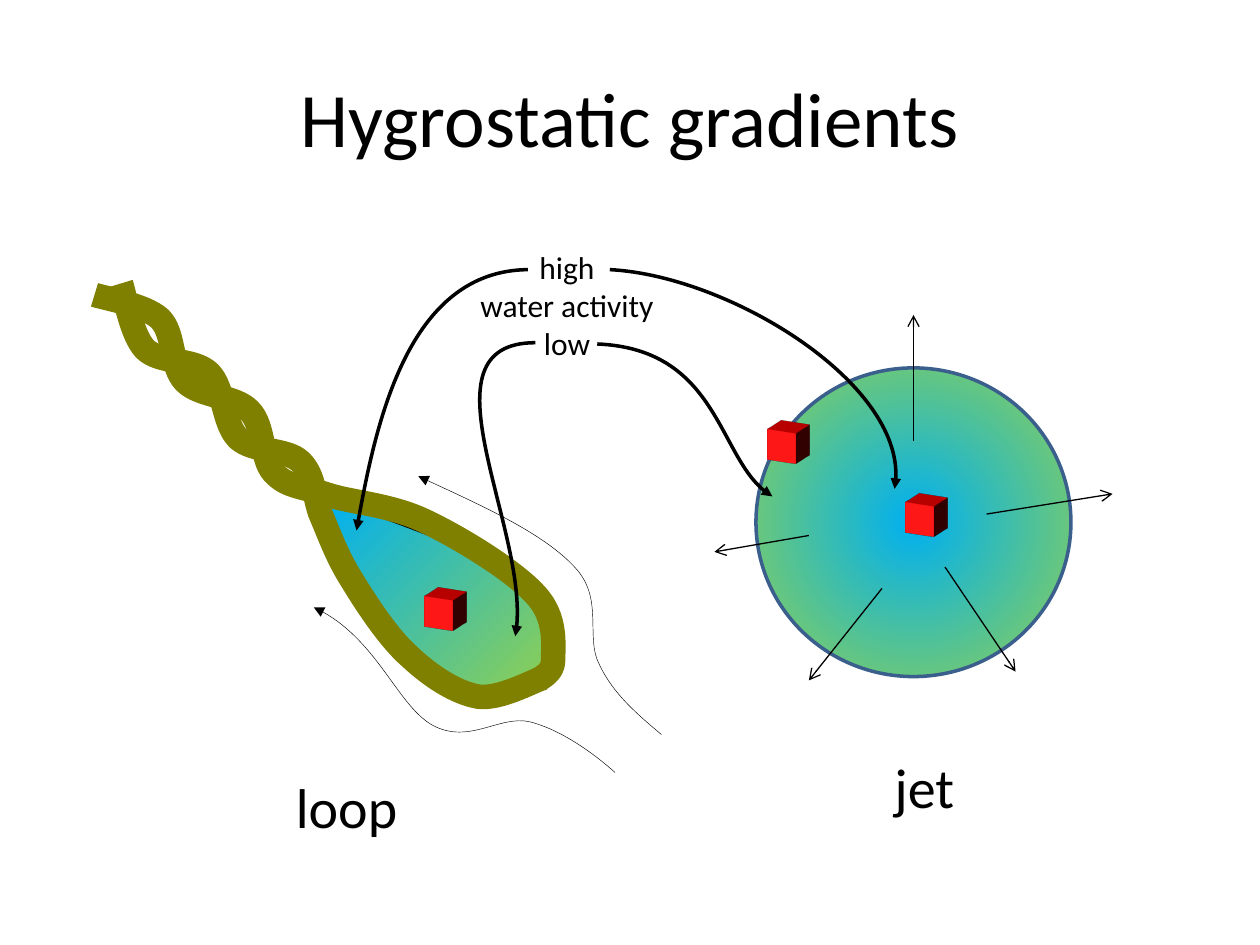
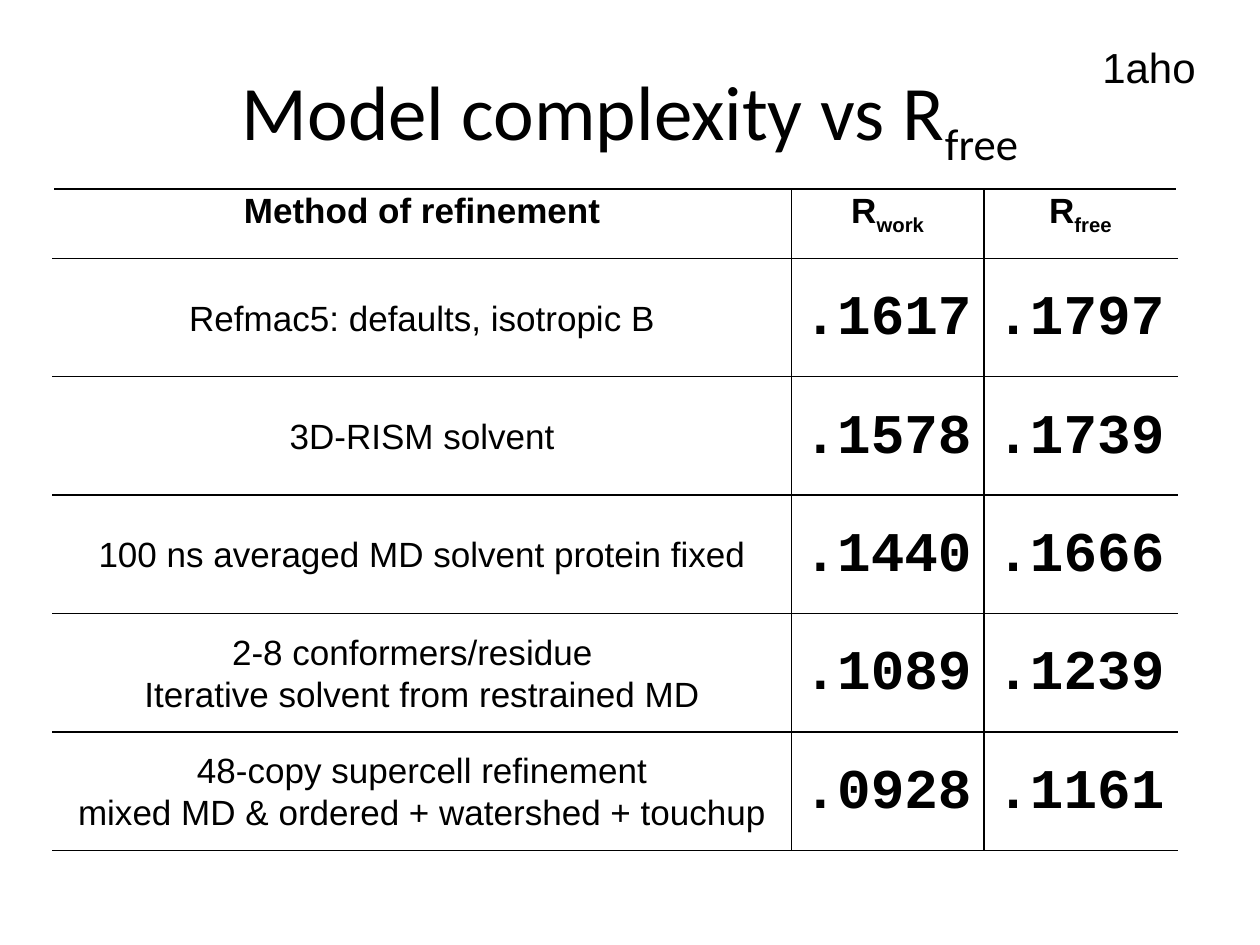
from lxml import etree
from pptx import Presentation
from pptx.dml.color import RGBColor
from pptx.enum import shapes, text
from pptx.oxml import ns
from pptx.util import Inches, Pt

# Shared style
BLACK, WHITE = "000000", "FFFFFF"
WET, DRY = "00B0F0", "92D050"
ROPE, JET_EDGE, CRYSTAL = "808000", "3A5F8C", "FF0000"
BODY, PLAIN, DIGITS = "Calibri", "Arial", "Courier New"
CENTER = text.PP_ALIGN.CENTER
CUBE_SIZE = 0.25
BOUND_STEPS = 40


def color(value):
    return RGBColor.from_string(value)


def add_xml(parent, tag, **attributes):
    return etree.SubElement(parent, ns.qn(tag), attributes)


# Text
def style_runs(para, font, size, bold=False):
    for span in para.runs:
        span.font.name, span.font.size, span.font.bold = font, Pt(size), bold
        span.font.color.rgb = color(BLACK)


def write(frame, content, font, size, bold=False, align=None, spacing=None):
    """Fill a frame; an underscore starts a subscript."""
    base, _, subscript = content.partition("_")
    frame.text = base
    if subscript:
        span = frame.paragraphs[-1].add_run()
        span.text = subscript
        span._r.get_or_add_rPr().set("baseline", "-25000")
    for para in frame.paragraphs:
        para.alignment, para.line_spacing = align, spacing
        style_runs(para, font, size, bold)


def add_label(page, left, top, width, height, content, font, size, align=None):
    box = page.shapes.add_textbox(Inches(left), Inches(top), Inches(width), Inches(height))
    box.text_frame.word_wrap = False
    box.text_frame.auto_size = text.MSO_AUTO_SIZE.SHAPE_TO_FIT_TEXT
    write(box.text_frame, content, font, size, align=align)


def add_page(deck, title):
    page = deck.slides.add_slide(deck.slide_layouts[5])
    holder = page.shapes.title
    holder.left, holder.top = Inches(0.5), Inches(0.3)
    holder.width, holder.height = Inches(9), Inches(1.25)
    holder.text_frame.vertical_anchor = text.MSO_ANCHOR.MIDDLE
    write(holder.text_frame, title, BODY, 44, align=CENTER)
    return page


# Lines and outlines
def style_line(shape, line_color, width, arrowhead=None):
    shape.line.color.rgb = color(line_color)
    shape.line.width = Pt(width)
    if arrowhead:
        add_xml(shape.line._get_or_add_ln(), "a:tailEnd", type=arrowhead)


def curve_range(values):
    """Lowest and highest value reached by a chain of cubic curves."""
    reached = []
    for i in range(0, len(values) - 1, 3):
        a, b, c, d = values[i:i + 4]
        for step in range(BOUND_STEPS + 1):
            t = step / BOUND_STEPS
            s = 1 - t
            reached.append(a * s ** 3 + 3 * b * t * s * s + 3 * c * t * t * s + d * t ** 3)
    return round(min(reached)), round(max(reached))


def bend(shape, places):
    """Turn each three straight segments into one cubic curve and fit the frame."""
    outline = shape._element.spPr.find(".//" + ns.qn("a:path"))
    segments = outline.findall(ns.qn("a:lnTo"))
    for i in range(0, len(segments), 3):
        curve = etree.Element(ns.qn("a:cubicBezTo"))
        segments[i].addprevious(curve)
        for segment in segments[i:i + 3]:
            curve.append(segment[0])
            outline.remove(segment)
    (low_x, high_x), (low_y, high_y) = (curve_range(axis) for axis in zip(*places))
    shift_x, shift_y = shape.left - low_x, shape.top - low_y
    for point in outline.iter(ns.qn("a:pt")):
        point.set("x", str(int(point.get("x")) + shift_x))
        point.set("y", str(int(point.get("y")) + shift_y))
    shape.left, shape.top = low_x, low_y
    shape.width, shape.height = high_x - low_x, high_y - low_y
    outline.set("w", str(shape.width))
    outline.set("h", str(shape.height))


def add_curve(page, left, top, points, line_color, width, arrowhead=None, close=False):
    """Points are a start, then two controls and an end for each curve."""
    places = [(Inches(left + x), Inches(top + y)) for x, y in points]
    builder = page.shapes.build_freeform(*places[0], scale=1.0)
    builder.add_line_segments(places[1:], close=close)
    shape = builder.convert_to_shape()
    bend(shape, places)
    shape.shadow.inherit = False
    shape.fill.background()
    style_line(shape, line_color, width, arrowhead)
    return shape


def add_arrow(page, left, top, start, end):
    ends = [Inches(v) for x, y in (start, end) for v in (left + x, top + y)]
    arrow = page.shapes.add_connector(shapes.MSO_CONNECTOR.STRAIGHT, *ends)
    style_line(arrow, BLACK, 0.75, "arrow")
    add_xml(arrow._element.spPr, "a:effectLst")


def fill_gradient(shape, radial=False):
    shape.fill.gradient()
    for stop, value, position in zip(shape.fill.gradient_stops, (WET, DRY), (0, 1)):
        stop.color.rgb = color(value)
        stop.position = position
    shape.fill.gradient_angle = 315
    if radial:
        linear = shape._element.spPr.find(".//" + ns.qn("a:lin"))
        circle = add_xml(linear.getparent(), "a:path", path="circle")
        add_xml(circle, "a:fillToRect", l="50000", t="50000", r="50000", b="50000")
        linear.getparent().remove(linear)


def add_cube(page, left, top):
    """A square turned in space and extruded by its own width."""
    cube = page.shapes.add_shape(shapes.MSO_SHAPE.RECTANGLE, Inches(left), Inches(top),
                                 Inches(CUBE_SIZE), Inches(CUBE_SIZE))
    cube.fill.solid()
    cube.fill.fore_color.rgb = color(CRYSTAL)
    cube.line.fill.background()
    cube.shadow.inherit = False
    scene = add_xml(cube._element.spPr, "a:scene3d")
    add_xml(scene, "a:camera", prst="isometricOffAxis2Left")
    add_xml(scene, "a:lightRig", rig="threePt", dir="t")
    add_xml(cube._element.spPr, "a:sp3d", extrusionH=str(Inches(CUBE_SIZE)))


# Loop: a twisted rope holding a drop, with gas flowing past
DROP = [
    (3.05, 2.17), (3.31, 2.31), (3.49, 2.44), (3.59, 2.58), (3.68, 2.73), (3.69, 2.93),
    (3.63, 3.04), (3.57, 3.14), (3.35, 3.19), (3.22, 3.21), (3.08, 3.24), (2.96, 3.23),
    (2.81, 3.17), (2.65, 3.11), (2.46, 3.05), (2.31, 2.85), (2.16, 2.66), (1.99, 2.17),
    (1.91, 1.98), (1.84, 1.8), (1.84, 1.78), (1.86, 1.74), (1.87, 1.7), (1.83, 1.7),
    (2.03, 1.77), (2.23, 1.84), (2.79, 2.04), (3.05, 2.17)]
UPPER_STRAND = [
    (3.51, 3.16), (3.53, 3.13), (3.64, 3.1), (3.64, 2.99), (3.64, 2.87), (3.67, 2.65),
    (3.5, 2.47), (3.33, 2.28), (2.89, 2.01), (2.61, 1.88), (2.33, 1.75), (2.03, 1.74),
    (1.83, 1.67), (1.63, 1.61), (1.52, 1.61), (1.42, 1.5), (1.32, 1.39), (1.35, 1.13),
    (1.23, 1.01), (1.12, 0.89), (0.84, 0.9), (0.72, 0.78), (0.6, 0.66), (0.64, 0.4),
    (0.52, 0.28), (0.4, 0.17), (0.09, 0.12), (0, 0.09)]
LOWER_STRAND = [
    (3.56, 3.13), (3.47, 3.16), (3.22, 3.3), (3.05, 3.28), (2.87, 3.25), (2.67, 3.12),
    (2.5, 2.96), (2.33, 2.81), (2.15, 2.53), (2.04, 2.35), (1.92, 2.16), (1.86, 1.98),
    (1.79, 1.82), (1.74, 1.67), (1.74, 1.51), (1.63, 1.41), (1.52, 1.31), (1.26, 1.34),
    (1.14, 1.23), (1.02, 1.11), (1.03, 0.83), (0.91, 0.71), (0.78, 0.59), (0.52, 0.64),
    (0.4, 0.52), (0.29, 0.4), (0.24, 0.09), (0.21, 0)]
FLOWS = [
    [(4.5, 3.58), (4.31, 3.42), (4.12, 3.26), (4.01, 3.03), (3.89, 2.81), (4.05, 2.5),
     (3.81, 2.25), (3.57, 1.99), (3.07, 1.76), (2.57, 1.53)],
    [(4.13, 3.88), (3.94, 3.71), (3.69, 3.54), (3.46, 3.48), (3.22, 3.42), (2.98, 3.66),
     (2.69, 3.51), (2.41, 3.36), (2.24, 2.8), (1.74, 2.57)]]


def draw_loop(page, left, top):
    drop = add_curve(page, left, top, DROP, BLACK, 0.75, close=True)
    fill_gradient(drop)
    for strand in (UPPER_STRAND, LOWER_STRAND):
        add_curve(page, left, top, strand, ROPE, 14)
    add_cube(page, left + 2.61, top + 2.49)
    add_label(page, left + 1.5, top + 3.83, 1.05, 0.64, "loop", BODY, 32)
    for flow in FLOWS:
        add_curve(page, left, top, flow, BLACK, 0.25, "triangle")


# Jet: a round section with gas leaving it
JET_ARROWS = [((0.42, 1.33), (-0.33, 1.46)), ((1.25, 0.58), (1.25, -0.42)),
              ((1.83, 1.16), (2.83, 1)), ((1.5, 1.58), (2.06, 2.41)),
              ((1, 1.75), (0.42, 2.48))]


def draw_jet(page, left, top, width, height):
    disc = page.shapes.add_shape(shapes.MSO_SHAPE.OVAL, Inches(left), Inches(top),
                                 Inches(width), Inches(height))
    disc.shadow.inherit = False
    fill_gradient(disc, radial=True)
    style_line(disc, JET_EDGE, 2)
    add_label(page, left + 1, top + 3, 0.68, 0.64, "jet", BODY, 32)
    for x, y in ((0.08, 0.5), (1.17, 1.08)):
        add_cube(page, left + x, top + y)
    for start, end in JET_ARROWS:
        add_arrow(page, left, top, start, end)


# Water activity: a shared label pointing into both samples
POINTERS = [[(0.52, 0.22), (-0.43, 0.23), (-0.7, 1.5), (-0.84, 2.29)],
            [(1.17, 0.22), (2.12, 0.27), (3.58, 1.17), (3.43, 1.96)],
            [(0.58, 0.8), (-0.37, 0.8), (0.57, 2.34), (0.42, 3.13)],
            [(1.07, 0.81), (2.02, 0.85), (2.03, 1.77), (2.46, 2.02)]]


def draw_activity(page, left, top):
    for pointer in POINTERS:
        add_curve(page, left, top, pointer, BLACK, 2, "triangle")
    add_label(page, left, top, 1.66, 1.01, "high\nwater activity\nlow", BODY, 18, CENTER)


# Refinement table
RESULTS = [
    ("Method of refinement", "R_work", "R_free"),
    ("Refmac5: defaults, isotropic B", ".1617", ".1797"),
    ("3D-RISM solvent", ".1578", ".1739"),
    ("100 ns averaged MD solvent protein fixed", ".1440", ".1666"),
    ("2-8 conformers/residue  \nIterative solvent from restrained MD", ".1089", ".1239"),
    ("48-copy supercell refinement\vmixed MD & ordered + watershed + touchup",
     ".0928", ".1161")]
COLUMN_WIDTHS = (5.86, 1.53, 1.53)
HEADER_HEIGHT, ROW_HEIGHT = 0.55, 0.94


def border_cell(cell, first, last):
    properties = cell._tc.get_or_add_tcPr()
    sides = (("L", WHITE if first else BLACK), ("R", WHITE if last else BLACK),
             ("T", BLACK), ("B", BLACK))
    for position, (side, value) in enumerate(sides):
        edge = etree.Element(ns.qn("a:ln" + side), w=str(Pt(1)))
        add_xml(add_xml(edge, "a:solidFill"), "a:srgbClr", val=value)
        properties.insert(position, edge)


def draw_results(page, left, top):
    heights = [HEADER_HEIGHT] + [ROW_HEIGHT] * (len(RESULTS) - 1)
    table = page.shapes.add_table(len(RESULTS), len(COLUMN_WIDTHS), Inches(left), Inches(top),
                                  Inches(sum(COLUMN_WIDTHS)), Inches(sum(heights))).table
    table.first_row = table.horz_banding = False
    for column, width in zip(table.columns, COLUMN_WIDTHS):
        column.width = Inches(width)
    for r, (values, height) in enumerate(zip(RESULTS, heights)):
        table.rows[r].height = Inches(height)
        for c, value in enumerate(values):
            cell = table.cell(r, c)
            is_number = r > 0 and c > 0
            cell.margin_left = cell.margin_right = Inches(0.07)
            cell.margin_top = cell.margin_bottom = 0
            cell.vertical_anchor = text.MSO_ANCHOR.MIDDLE if r else text.MSO_ANCHOR.TOP
            cell.fill.background()
            border_cell(cell, c == 0, c == len(values) - 1)
            write(cell.text_frame, value, DIGITS if is_number else PLAIN,
                  32 if is_number else 20, r == 0 or is_number, CENTER, 1.07)


def main():
    deck = Presentation()
    deck.slide_width, deck.slide_height = Inches(10), Inches(7.5)

    page = add_page(deck, "Hygrostatic gradients")
    draw_jet(page, 6, 2.92, 2.5, 2.45)
    draw_loop(page, 0.75, 2.25)
    draw_activity(page, 3.67, 1.92)

    page = add_page(deck, "Model complexity vs R_free")
    draw_results(page, 0.42, 1.5)
    add_label(page, 8.65, 0.28, 0.95, 0.5, "1aho", PLAIN, 24)

    deck.save("out.pptx")


if __name__ == "__main__":
    main()
